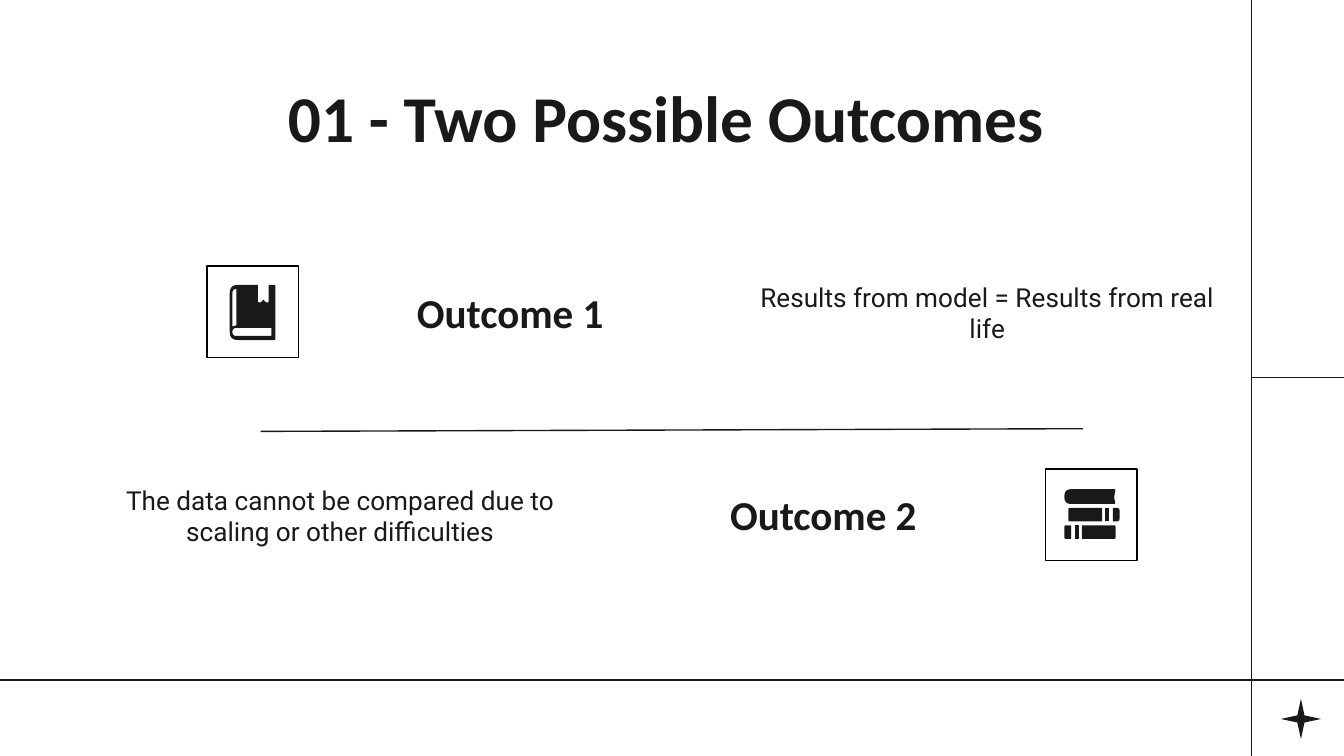
"""Build the "Two Possible Outcomes" slide."""
import math
from dataclasses import dataclass
from typing import NamedTuple

import pptx
import pptx.dml.color
import pptx.enum.shapes
import pptx.enum.text
import pptx.oxml
import pptx.oxml.ns
import pptx.util

Inches = pptx.util.Inches
Anchor = pptx.enum.text.MSO_ANCHOR
Preset = pptx.enum.shapes.MSO_SHAPE
Color = pptx.dml.color.RGBColor


@dataclass(frozen=True)
class Theme:
    ink: Color = Color.from_string("191919")
    frame: Color = Color.from_string("000000")
    paper: Color = Color.from_string("FFFFFF")
    heading_font: str = "Calibri"
    body_font: str = "Roboto"
    title_size: int = 35
    heading_size: int = 22
    body_size: int = 14
    line_width: float = 0.75


class Label(NamedTuple):
    text: str
    left: float
    top: float
    width: float
    height: float
    size: int
    heading: bool = True
    anchor: Anchor = Anchor.MIDDLE


class Rule(NamedTuple):
    x1: float
    y1: float
    x2: float
    y2: float


class Corner(NamedTuple):
    x: float
    y: float
    radius: float = 0


THEME = Theme()
FRAME_SIZE = 0.68

RULES = [
    Rule(9.31, 2.81, 10, 2.81),
    Rule(-0.04, 5.06, 10.04, 5.06),
    Rule(9.31, -0.03, 9.31, 5.66),
    Rule(1.94, 3.21, 8.06, 3.19),
]
LABELS = [
    Label("01 - Two Possible Outcomes", 0.79, 0.58, 8.43, 0.68, THEME.title_size, anchor=Anchor.BOTTOM),
    Label("Outcome 1", 2.34, 2.03, 3.01, 0.59, THEME.heading_size),
    Label("Outcome 2", 4.67, 3.53, 3.01, 0.59, THEME.heading_size),
    Label("Results from model = Results from real life", 5.58, 1.78, 3.63, 1.09, THEME.body_size, False),
    Label("The data cannot be compared due to scaling or other difficulties",
          0.79, 3.29, 3.58, 1.09, THEME.body_size, False),
]
FRAMES = [(1.54, 1.98), (7.78, 3.49)]


def block(left: float, top: float, right: float, bottom: float,
          left_radius: float = 0, right_radius: float = 0) -> list[Corner]:
    """Return a rectangle with its own radius on each side."""
    return [Corner(left, top, left_radius), Corner(right, top, right_radius),
            Corner(right, bottom, right_radius), Corner(left, bottom, left_radius)]


BOOK = [
    [Corner(1.71, 2.12, 0.06), Corner(1.92, 2.12), Corner(1.92, 2.25, 0.01), Corner(1.94, 2.25),
     Corner(1.96, 2.23), Corner(1.98, 2.25), Corner(2, 2.25, 0.01), Corner(2, 2.12),
     Corner(2.05, 2.12, 0.01), Corner(2.05, 2.53, 0.01), Corner(1.71, 2.53, 0.06)],
    [Corner(1.76, 2.15), Corner(1.76, 2.42), Corner(1.73, 2.43), Corner(1.73, 2.15, 0.03)],
    [Corner(2.02, 2.44), Corner(2.02, 2.5), Corner(1.73, 2.5, 0.03), Corner(1.73, 2.44, 0.03)],
]
BOOK_STACK = [
    [Corner(7.92, 3.64, 0.05), Corner(8.3, 3.64, 0.01), Corner(8.29, 3.7),
     Corner(8.3, 3.75, 0.01), Corner(7.92, 3.75, 0.05)],
    block(8.22, 3.78, 8.25, 3.88),
    block(8.28, 3.78, 8.33, 3.88, right_radius=0.02),
    block(7.95, 3.78, 8.2, 3.88, left_radius=0.01),
    block(8, 3.91, 8.03, 4.01),
    block(8.05, 3.91, 8.3, 4.01, right_radius=0.01),
    block(7.92, 3.91, 7.97, 4.01, left_radius=0.01),
]


def rounded(corners: list[Corner], steps: int = 6) -> list[tuple[int, int]]:
    """Trace an outline, bending each rounded corner along a quadratic curve."""
    points = []
    for index, corner in enumerate(corners):
        if not corner.radius:
            points.append((Inches(corner.x), Inches(corner.y)))
            continue
        ends = []
        for other in (corners[index - 1], corners[(index + 1) % len(corners)]):
            share = corner.radius / math.dist(corner[:2], other[:2])
            ends.append((corner.x + (other.x - corner.x) * share,
                         corner.y + (other.y - corner.y) * share))
        for step in range(steps + 1):
            t = step / steps
            weights = ((1 - t) ** 2, 2 * t * (1 - t), t ** 2)
            curve = (ends[0], corner[:2], ends[1])
            points.append(tuple(Inches(sum(w * p[axis] for w, p in zip(weights, curve)))
                                for axis in (0, 1)))
    return points


def paint(shape, color: Color) -> None:
    """Give a shape a plain fill without line or shadow."""
    shape.shadow.inherit = False
    shape.fill.solid()
    shape.fill.fore_color.rgb = color
    shape.line.fill.background()


def add_outline(page, contours: list[list[Corner]]) -> None:
    """Draw one filled freeform from its contours."""
    first, *holes = [rounded(contour) for contour in contours]
    builder = page.shapes.build_freeform(*first[0])
    builder.add_line_segments(first[1:], close=True)
    for hole in holes:
        builder.move_to(*hole[0])
        builder.add_line_segments(hole[1:], close=True)
    paint(builder.convert_to_shape(), THEME.ink)


def add_rule(page, rule: Rule) -> None:
    """Draw a thin straight line."""
    line = page.shapes.add_connector(pptx.enum.shapes.MSO_CONNECTOR.STRAIGHT,
                                     *(Inches(value) for value in rule))
    line.line.color.rgb = THEME.ink
    line.line.width = pptx.util.Pt(THEME.line_width)
    properties = line._element.spPr
    properties.append(properties.makeelement(pptx.oxml.ns.qn("a:effectLst"), {}))


def add_label(page, label: Label) -> None:
    """Write a centred text box."""
    box = page.shapes.add_textbox(*(Inches(value) for value in label[1:5]))
    frame = box.text_frame
    frame.word_wrap = True
    frame.vertical_anchor = label.anchor
    frame.margin_left = 0
    frame.margin_top = frame.margin_right = frame.margin_bottom = Inches(0.1)
    para = frame.paragraphs[0]
    para.alignment = pptx.enum.text.PP_ALIGN.CENTER
    span = para.add_run()
    span.text = label.text
    span.font.name = THEME.heading_font if label.heading else THEME.body_font
    span.font.size = pptx.util.Pt(label.size)
    span.font.bold = label.heading
    span.font.color.rgb = THEME.ink


def add_frame(page, left: float, top: float) -> None:
    """Draw the square around an icon."""
    frame = page.shapes.add_shape(Preset.RECTANGLE, Inches(left), Inches(top),
                                  Inches(FRAME_SIZE), Inches(FRAME_SIZE))
    frame.shadow.inherit = False
    frame.fill.background()
    frame.line.color.rgb = THEME.frame
    frame.line.width = pptx.util.Pt(THEME.line_width)


def main() -> None:
    """Build and save the deck."""
    deck = pptx.Presentation()
    deck.slide_width, deck.slide_height = Inches(10), Inches(10 * 9 / 16)
    page = deck.slides.add_slide(deck.slide_layouts[6])
    page.background.fill.solid()
    page.background.fill.fore_color.rgb = THEME.paper
    for rule in RULES:
        add_rule(page, rule)
    for label in LABELS:
        add_label(page, label)
    for left, top in FRAMES:
        add_frame(page, left, top)
    for part in BOOK_STACK:
        add_outline(page, [part])
    add_outline(page, BOOK)
    star = page.shapes.add_shape(Preset.STAR_4_POINT, Inches(9.53), Inches(5.2), Inches(0.3), Inches(0.3))
    star.adjustments[0] = 0.125
    paint(star, THEME.ink)
    deck.save("out.pptx")


if __name__ == "__main__":
    main()
